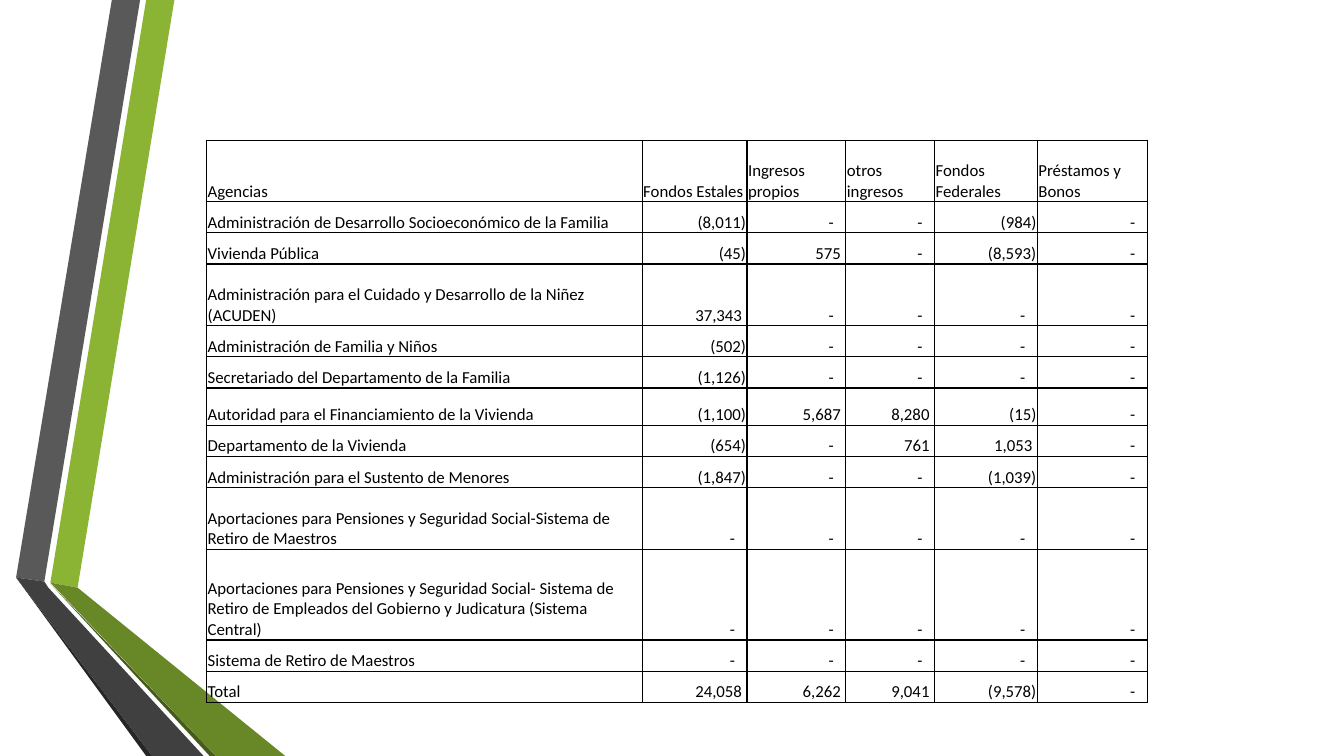
import pptx
import pptx.dml.color
import pptx.enum.text
import pptx.oxml
import pptx.oxml.ns
import pptx.util

Inches = pptx.util.Inches
Align = pptx.enum.text.PP_ALIGN

COLORS = {
    "lime": "8BB434",
    "gray": "595959",
    "dark_edge": "262626",
    "olive_edge": "465A1A",
    "olive": "688727",
    "charcoal": "404040",
    "ink": "000000",
}

RIBBONS = [
    ("lime", [(0.5, 5.78), (0.77, 5.83), (1.73, 0), (1.45, 0)]),
    ("gray", [(1.39, 0), (1.11, 0), (0.16, 5.73), (0.44, 5.77)]),
    ("dark_edge", [(0.16, 5.73), (1.45, 7.5), (1.51, 7.5)]),
    ("olive_edge", [(0.5, 5.79), (2.08, 7.5), (2.14, 7.5)]),
    ("olive", [(0.5, 5.78), (2.14, 7.5), (2.83, 7.5), (0.77, 5.83)]),
    ("charcoal", [(2.02, 7.5), (0.48, 5.83), (0.44, 5.77), (0.16, 5.73), (1.51, 7.5)]),
]

COLUMN_WIDTHS = [4.32, 1.04, 0.98, 0.88, 1.02, 1.09]
LINE_HEIGHT = 0.31
ROW_HEIGHTS = {0: 0.61, 3: 0.61, 6: 0.37, 9: 0.61, 10: 0.9}

BUDGET = [
    ["Agencias", "Fondos Estales", "Ingresos propios", "otros ingresos",
     "Fondos Federales", "Préstamos y Bonos"],
    ["Administración de Desarrollo Socioeconómico de la Familia",
     "(8,011)", "-", "-", "(984)", "-"],
    ["Vivienda Pública", "(45)", "575", "-", "(8,593)", "-"],
    ["Administración para el Cuidado y Desarrollo de la Niñez (ACUDEN)",
     "37,343", "-", "-", "-", "-"],
    ["Administración de Familia y Niños", "(502)", "-", "-", "-", "-"],
    ["Secretariado del Departamento de la Familia", "(1,126)", "-", "-", "-", "-"],
    ["Autoridad para el Financiamiento de la Vivienda",
     "(1,100)", "5,687", "8,280", "(15)", "-"],
    ["Departamento de la Vivienda", "(654)", "-", "761", "1,053", "-"],
    ["Administración para el Sustento de Menores", "(1,847)", "-", "-", "(1,039)", "-"],
    ["Aportaciones para Pensiones y Seguridad Social-Sistema de Retiro de Maestros",
     "-", "-", "-", "-", "-"],
    ["Aportaciones para Pensiones y Seguridad Social- Sistema de Retiro de "
     "Empleados del Gobierno y Judicatura (Sistema Central)",
     "-", "-", "-", "-", "-"],
    ["Sistema de Retiro de Maestros", "-", "-", "-", "-", "-"],
    ["Total", "24,058", "6,262", "9,041", "(9,578)", "-"],
]


def rgb(name):
    return pptx.dml.color.RGBColor.from_string(COLORS[name])


def apply_format(target, values):
    for name, value in values.items():
        setattr(target, name, value)


class SlideBuilder:
    font_format = {"name": "Calibri", "size": pptx.util.Pt(12), "bold": False}
    cell_format = {
        "vertical_anchor": pptx.enum.text.MSO_ANCHOR.BOTTOM,
        "margin_left": Inches(0.01),
        "margin_top": Inches(0.01),
        "margin_bottom": 0,
    }
    table_format = {"first_row": False, "horz_banding": False}

    def __init__(self, slide):
        self.slide = slide

    def ribbon(self, color, points):
        corners = [(Inches(x), Inches(y)) for x, y in points]
        builder = self.slide.shapes.build_freeform(*corners[0])
        builder.add_line_segments(corners[1:], close=True)
        shape = builder.convert_to_shape()
        shape.shadow.inherit = False
        shape.fill.solid()
        shape.fill.fore_color.rgb = rgb(color)
        shape.line.fill.background()

    def border(self, cell):
        properties = cell._tc.get_or_add_tcPr()
        for index, side in enumerate(("lnL", "lnR", "lnT", "lnB")):
            line = pptx.oxml.parse_xml(
                f'<a:{side} {pptx.oxml.ns.nsdecls("a")} w="{pptx.util.Pt(1)}">'
                f'<a:solidFill><a:srgbClr val="{COLORS["ink"]}"/></a:solidFill></a:{side}>'
            )
            properties.insert(index, line)

    def cell(self, cell, text, numeric):
        apply_format(cell, self.cell_format)
        padding = 0.01
        if numeric and not text.endswith(")"):
            padding = 0.12 if text == "-" else 0.05
        cell.margin_right = Inches(padding)
        cell.fill.background()
        self.border(cell)
        paragraph = cell.text_frame.paragraphs[0]
        paragraph.alignment = Align.RIGHT if numeric else Align.LEFT
        run = paragraph.add_run()
        run.text = text
        apply_format(run.font, self.font_format)
        run.font.color.rgb = rgb("ink")

    def table(self, left, top, rows, widths, heights):
        table = self.slide.shapes.add_table(
            len(rows), len(widths), Inches(left), Inches(top),
            Inches(sum(widths)), Inches(sum(heights)),
        ).table
        apply_format(table, self.table_format)
        for column, width in zip(table.columns, widths):
            column.width = Inches(width)
        for row_index, (values, height) in enumerate(zip(rows, heights)):
            table.rows[row_index].height = Inches(height)
            for column_index, text in enumerate(values):
                numeric = row_index > 0 and column_index > 0
                self.cell(table.cell(row_index, column_index), text, numeric)


def main():
    presentation = pptx.Presentation()
    presentation.slide_width = Inches(13.33)
    presentation.slide_height = Inches(7.5)
    builder = SlideBuilder(presentation.slides.add_slide(presentation.slide_layouts[6]))
    for color, points in RIBBONS:
        builder.ribbon(color, points)
    heights = [ROW_HEIGHTS.get(index, LINE_HEIGHT) for index in range(len(BUDGET))]
    builder.table(2.05, 1.39, BUDGET, COLUMN_WIDTHS, heights)
    presentation.save("out.pptx")


if __name__ == "__main__":
    main()
